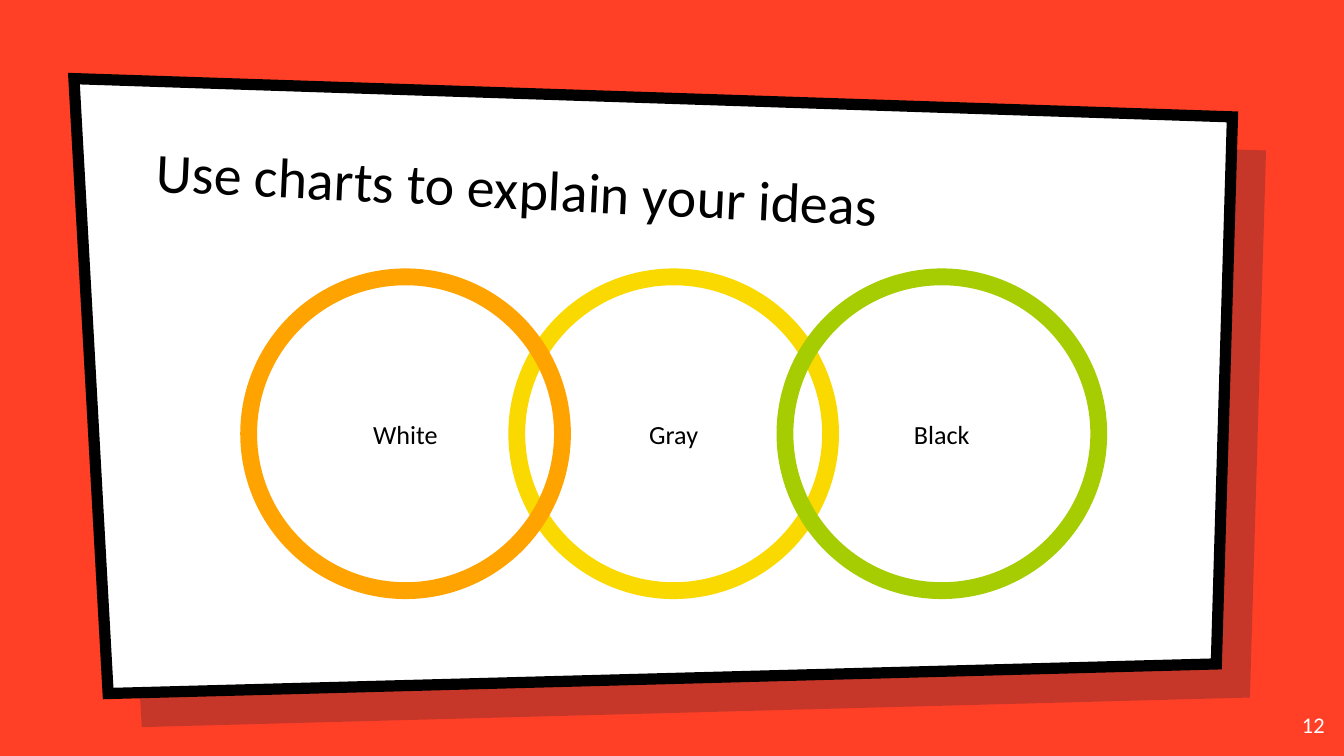
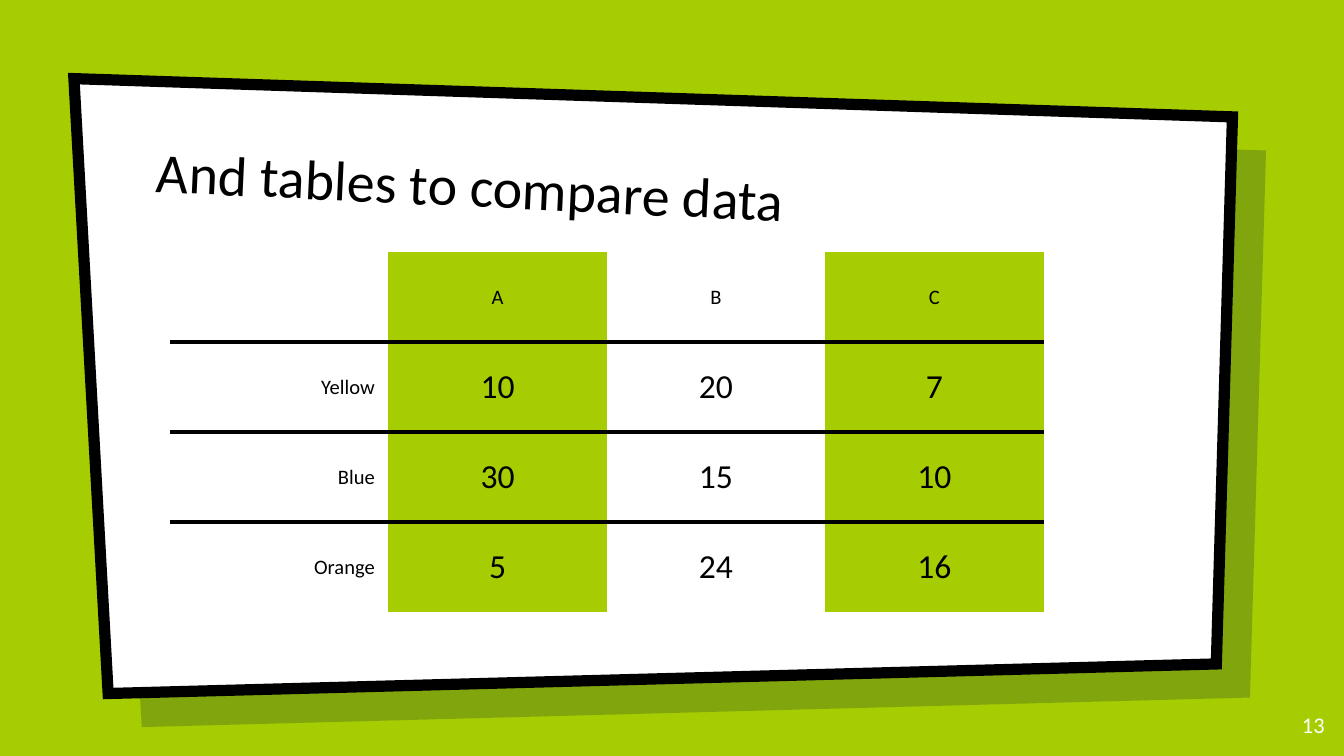
from dataclasses import dataclass
from typing import Any, NamedTuple

from lxml import etree
from pptx import Presentation
from pptx.dml.color import RGBColor
from pptx.enum.shapes import MSO_SHAPE
from pptx.enum.text import MSO_ANCHOR, MSO_AUTO_SIZE, PP_ALIGN
from pptx.oxml.ns import qn
from pptx.util import Pt

PX = 4572  # 200 px to the inch
OVAL = MSO_SHAPE.OVAL
LEFT, CENTER, RIGHT = PP_ALIGN.LEFT, PP_ALIGN.CENTER, PP_ALIGN.RIGHT
TOP, MIDDLE, BOTTOM = MSO_ANCHOR.TOP, MSO_ANCHOR.MIDDLE, MSO_ANCHOR.BOTTOM
NO_AUTOFIT = MSO_AUTO_SIZE.NONE
PLAIN_TABLE_STYLE = "{2D5ABB26-0587-4C30-8999-92F81FD0307C}"


@dataclass(frozen=True)
class Theme:
    font: str = "Calibri"
    black: str = "000000"
    white: str = "FFFFFF"
    red: str = "FF4026"
    green: str = "A6CD02"
    yellow: str = "FAD900"
    orange: str = "FFA300"
    shade: str = "001936"
    shade_percent: int = 22
    title_size: int = 30
    ring_size: int = 14
    number_size: int = 12
    label_size: int = 11
    value_size: int = 18
    card_line: int = 6
    ring_line: int = 9
    rule_line: int = 3


class Box(NamedTuple):
    left: int
    top: int
    width: int
    height: int

    def emu(self) -> tuple[int, ...]:
        return tuple(value * PX for value in self)


class Ring(NamedTuple):
    label: str
    color: str
    column: int


THEME = Theme()
SLIDE_SIZE = (2000, 1125)
CARD = ((110, 117), (1834, 174), (1810, 988), (161, 1032))
SHADE_OFFSET = 50
TITLE_BOX = Box(213, 192, 1538, 166)
TITLE_ANGLE = 2.7
NUMBER_BOX = Box(1871, 1039, 120, 86)
INSET = 20
CELL_INSET = 14

FIRST_RING = Box(370, 412, 467, 467)
RING_STEP = 399
RINGS = (
    Ring("Gray", THEME.yellow, 1),
    Ring("White", THEME.orange, 0),
    Ring("Black", THEME.green, 2),
)

TABLE_LEFT, TABLE_TOP = 253, 375
CELL_WIDTH, CELL_HEIGHT = 325, 134
TABLE_ROWS = (
    ("", "A", "B", "C"),
    ("Yellow", "10", "20", "7"),
    ("Blue", "30", "15", "10"),
    ("Orange", "5", "24", "16"),
)


def set_format(target: Any, values: dict[str, Any]) -> None:
    for name, value in values.items():
        setattr(target, name, value)


def rgb(color: str) -> RGBColor:
    return RGBColor.from_string(color)


def paint(target: Any, color: str | None) -> None:
    """Fill a shape or cell, or clear its fill when color is None."""
    if color is None:
        target.fill.background()
    else:
        target.fill.solid()
        target.fill.fore_color.rgb = rgb(color)


def outline(shape: Any, color: str, width: int) -> None:
    shape.line.color.rgb = rgb(color)
    shape.line.width = Pt(width)


def write(frame: Any, text: str, size: int, align: Any, color: str = THEME.black) -> None:
    frame.text = text
    para = frame.paragraphs[0]
    para.alignment = align
    set_format(para.font, {"name": THEME.font, "size": Pt(size)})
    para.font.color.rgb = rgb(color)


def fit_frame(frame: Any, anchor: Any) -> None:
    set_format(frame, {
        "word_wrap": True,
        "auto_size": NO_AUTOFIT,
        "vertical_anchor": anchor,
        "margin_left": INSET * PX,
        "margin_right": INSET * PX,
        "margin_top": INSET * PX,
        "margin_bottom": INSET * PX,
    })


def add_panel(page: Any, offset: int, color: str) -> Any:
    points = [(x + offset, y + offset) for x, y in CARD]
    builder = page.shapes.build_freeform(*points[0], scale=float(PX))
    builder.add_line_segments(points[1:], close=True)
    panel = builder.convert_to_shape()
    panel.shadow.inherit = False
    paint(panel, color)
    return panel


def add_card(page: Any) -> None:
    shade = add_panel(page, SHADE_OFFSET, THEME.shade)
    shade.line.fill.background()
    fill_color = shade.element.spPr.find(f"{qn('a:solidFill')}/{qn('a:srgbClr')}")
    etree.SubElement(fill_color, qn("a:alpha"), val=str(THEME.shade_percent * 1000))
    card = add_panel(page, 0, THEME.white)
    outline(card, THEME.black, THEME.card_line)
    etree.SubElement(card.element.spPr.find(qn("a:ln")), qn("a:miter"), lim="800000")


def add_title(page: Any, text: str) -> None:
    """Place the tilted title in front of the card."""
    title = page.shapes.title
    title.element.getparent().append(title.element)
    set_format(title, dict(zip(("left", "top", "width", "height"), TITLE_BOX.emu())))
    title.rotation = TITLE_ANGLE
    fit_frame(title.text_frame, BOTTOM)
    write(title.text_frame, text, THEME.title_size, LEFT)


def add_number(page: Any, number: int) -> None:
    frame = page.shapes.add_textbox(*NUMBER_BOX.emu()).text_frame
    fit_frame(frame, TOP)
    write(frame, str(number), THEME.number_size, RIGHT, THEME.white)


def add_page(deck: Any, background: str, title: str) -> Any:
    page = deck.slides.add_slide(deck.slide_layouts.get_by_name("Title Only"))
    paint(page.background, background)
    add_card(page)
    add_title(page, title)
    return page


def add_ring(page: Any, ring: Ring) -> None:
    box = FIRST_RING._replace(left=FIRST_RING.left + ring.column * RING_STEP)
    shape = page.shapes.add_shape(OVAL, *box.emu())
    shape.shadow.inherit = False
    paint(shape, None)
    outline(shape, ring.color, THEME.ring_line)
    fit_frame(shape.text_frame, MIDDLE)
    write(shape.text_frame, ring.label, THEME.ring_size, CENTER)


def add_rules(cell: Any, sides: list[str]) -> None:
    """Draw cell borders; they must come before the fill in the XML."""
    properties = cell._tc.get_or_add_tcPr()
    for position, side in enumerate(sides):
        rule = etree.Element(qn(f"a:{side}"), w=str(Pt(THEME.rule_line)))
        fill = etree.SubElement(rule, qn("a:solidFill"))
        etree.SubElement(fill, qn("a:srgbClr"), val=THEME.black)
        properties.insert(position, rule)


def format_cell(cell: Any, text: str, row: int, column: int) -> None:
    set_format(cell, {
        "vertical_anchor": MIDDLE,
        "margin_left": INSET * PX,
        "margin_right": INSET * PX,
        "margin_top": CELL_INSET * PX,
        "margin_bottom": CELL_INSET * PX,
    })
    is_label = row == 0 or column == 0
    size = THEME.label_size if is_label else THEME.value_size
    write(cell.text_frame, text, size, CENTER if column else RIGHT)
    paint(cell, THEME.green if column % 2 else None)
    sides = ["lnT"] if row > 0 else []
    if row < len(TABLE_ROWS) - 1:
        sides.append("lnB")
    add_rules(cell, sides)


def add_comparison(page: Any) -> None:
    rows, columns = len(TABLE_ROWS), len(TABLE_ROWS[0])
    box = Box(TABLE_LEFT, TABLE_TOP, columns * CELL_WIDTH, rows * CELL_HEIGHT)
    frame = page.shapes.add_table(rows, columns, *box.emu())
    table = frame.table
    set_format(table, {"first_row": False, "horz_banding": False})
    next(frame.element.iter(qn("a:tableStyleId"))).text = PLAIN_TABLE_STYLE
    for row, texts in enumerate(TABLE_ROWS):
        for column, text in enumerate(texts):
            format_cell(table.cell(row, column), text, row, column)


def main() -> None:
    deck = Presentation()
    deck.slide_width, deck.slide_height = (side * PX for side in SLIDE_SIZE)

    page = add_page(deck, THEME.red, "Use charts to explain your ideas")
    for ring in RINGS:
        add_ring(page, ring)
    add_number(page, 12)

    page = add_page(deck, THEME.green, "And tables to compare data")
    add_comparison(page)
    add_number(page, 13)

    deck.save("out.pptx")


if __name__ == "__main__":
    main()
